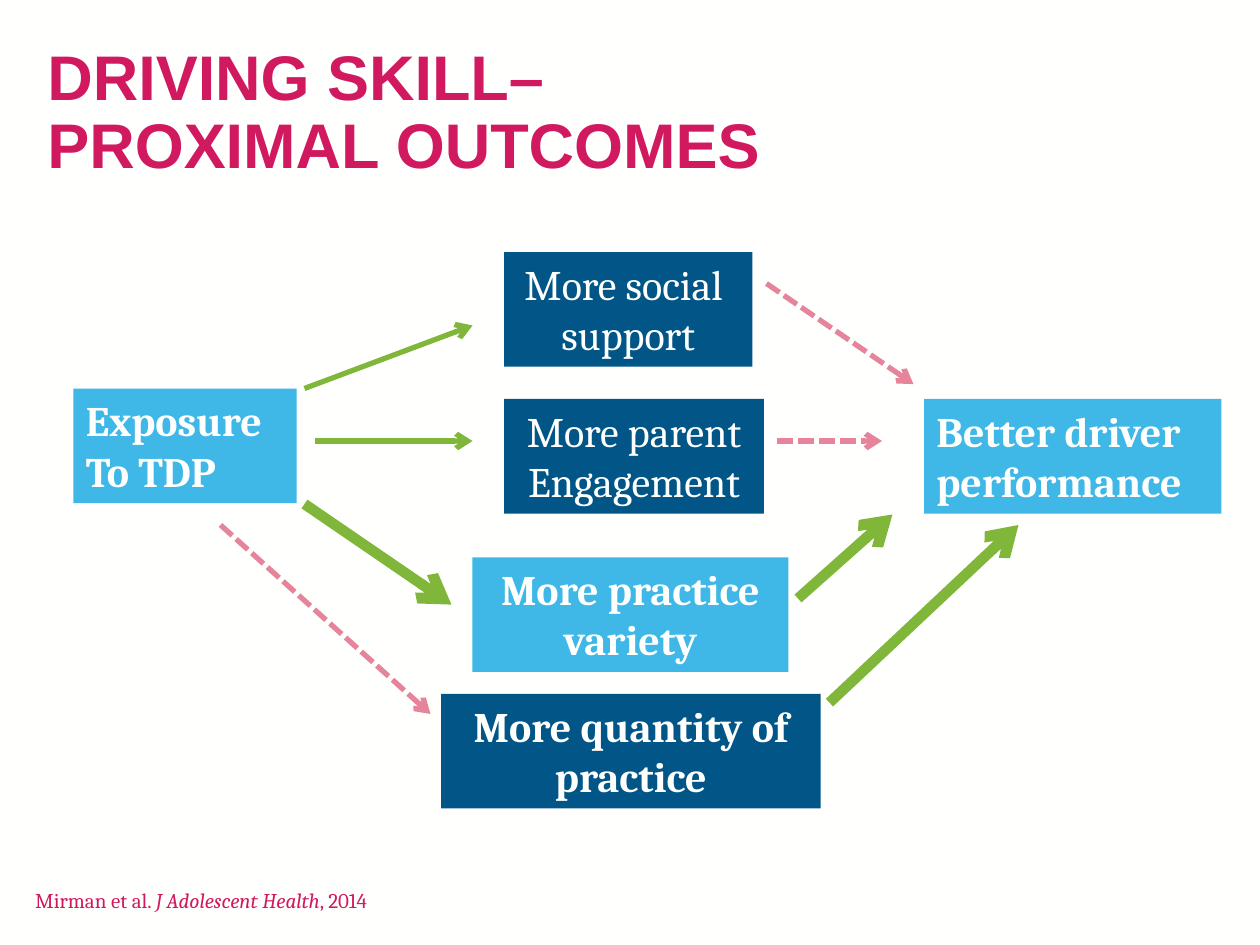
from pptx import Presentation
from pptx.dml.color import RGBColor
from pptx.enum.dml import MSO_LINE as Dash
from pptx.enum.shapes import MSO_CONNECTOR as Conn, MSO_SHAPE as Shape
from pptx.enum.text import MSO_ANCHOR as Anchor, MSO_AUTO_SIZE as Fit, PP_ALIGN as Align
from pptx.oxml.ns import qn
from pptx.util import Pt
from lxml.etree import SubElement

WHITE = RGBColor(0xFF, 0xFF, 0xFE)
PINK = RGBColor(0xD1, 0x19, 0x60)
ROSE = RGBColor(0xE5, 0x84, 0x9B)
GREEN = RGBColor(0x80, 0xB6, 0x39)
SKY = RGBColor(0x3F, 0xB8, 0xE7)
NAVY = RGBColor(0x02, 0x55, 0x87)


def style(para, name, size, color, bold=False):
    para.font.name = name
    para.font.size = Pt(size)
    para.font.color.rgb = color
    para.font.bold = bold


deck = Presentation()
deck.slide_width, deck.slide_height = Pt(720), Pt(540)
slide = deck.slides.add_slide(deck.slide_layouts[6])
slide.background.fill.solid()
slide.background.fill.fore_color.rgb = WHITE

title = slide.shapes.add_textbox(Pt(20), Pt(39.5), Pt(684), Pt(90)).text_frame
title.word_wrap = True
title.vertical_anchor = Anchor.MIDDLE
title.margin_bottom = Pt(42)
title.text = "DRIVING SKILL– \vPROXIMAL OUTCOMES"
title.paragraphs[0].line_spacing = 0.9
style(title.paragraphs[0], "Arial", 36, PINK, True)

boxes = [
    (42, 222, 127.5, SKY, True, Align.LEFT, "Exposure\nTo TDP"),
    (288, 144, 142, NAVY, False, Align.CENTER, "More social \nsupport"),
    (288, 228, 148.5, NAVY, False, Align.CENTER, "More parent\nEngagement"),
    (270, 318.5, 180.5, SKY, True, Align.CENTER, "More practice\nvariety"),
    (252, 396.5, 217, NAVY, True, Align.CENTER, "More quantity of\npractice"),
    (528, 228, 170, SKY, True, Align.LEFT, "Better driver\nperformance"),
]
for left, top, width, fill, bold, align, text in boxes:
    box = slide.shapes.add_shape(Shape.RECTANGLE, Pt(left), Pt(top), Pt(width), Pt(65.5))
    box.shadow.inherit = False
    box.fill.solid()
    box.fill.fore_color.rgb = fill
    box.line.fill.background()
    frame = box.text_frame
    frame.word_wrap = False
    frame.auto_size = Fit.SHAPE_TO_FIT_TEXT
    frame.vertical_anchor = Anchor.TOP
    frame.text = text
    for para in frame.paragraphs:
        para.alignment = align
        style(para, "Cambria", 24, WHITE, bold)

arrows = [
    (174, 288, 258, 345.5, GREEN, 6),
    (180, 252, 270, 252, GREEN, 3),
    (174, 222, 270, 186, GREEN, 3),
    (456, 342, 510, 294, GREEN, 6),
    (474, 401.5, 582, 300, GREEN, 6),
    (438, 162, 522, 219.5, ROSE, 3),
    (444, 252, 504, 252, ROSE, 3),
    (126, 300, 246, 408, ROSE, 3),
]
for *ends, color, width in arrows:
    arrow = slide.shapes.add_connector(Conn.STRAIGHT, *map(Pt, ends))
    arrow.line.color.rgb = color
    arrow.line.width = Pt(width)
    if color == ROSE:
        arrow.line.dash_style = Dash.SQUARE_DOT
    SubElement(arrow.line._get_or_add_ln(), qn("a:tailEnd"), type="arrow")
    SubElement(arrow._element.spPr, qn("a:effectLst"))

cite = slide.shapes.add_textbox(Pt(13), Pt(503.5), Pt(228), Pt(21.5)).text_frame
cite.word_wrap = False
cite.auto_size = Fit.SHAPE_TO_FIT_TEXT
para = cite.paragraphs[0]
style(para, "Cambria", 12, PINK)
for text, slant in [("Mirman et al. ", False), ("J Adolescent Health", True), (", 2014", False)]:
    run = para.add_run()
    run.text = text
    run.font.italic = slant

deck.save("out.pptx")
